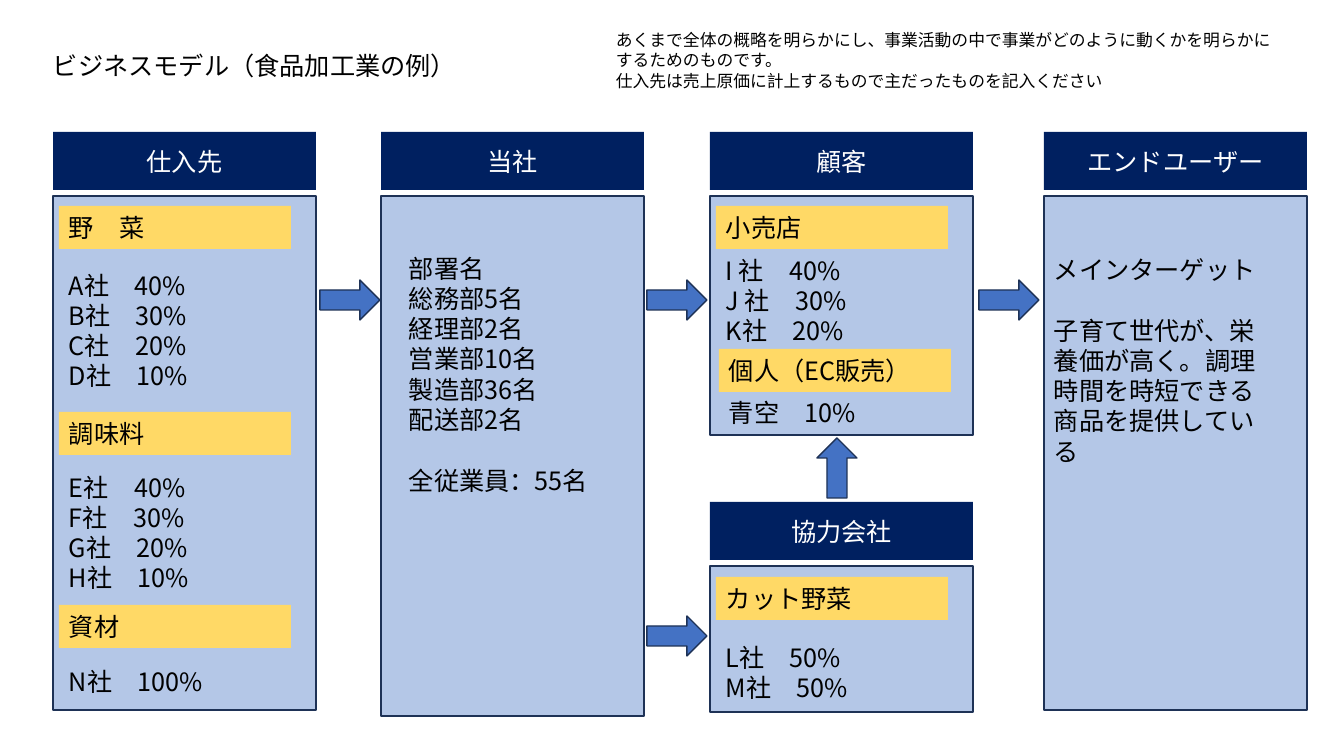
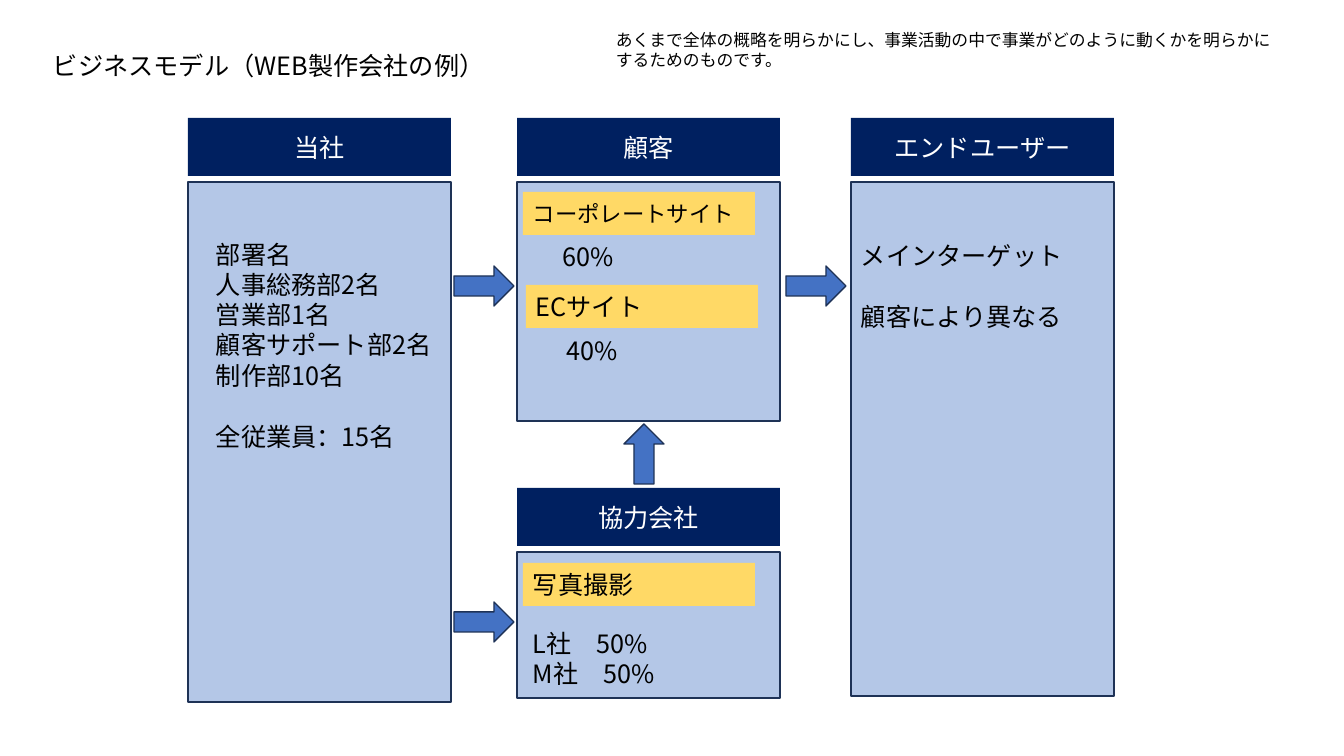
"""Build two business model diagrams: a food processor and a web studio."""
from lxml import etree
from pptx import Presentation
from pptx.dml.color import RGBColor
from pptx.enum.shapes import MSO_SHAPE
from pptx.enum.text import MSO_ANCHOR, PP_ALIGN
from pptx.oxml.ns import qn
from pptx.util import Pt

RECTANGLE, RIGHT, UP = MSO_SHAPE.RECTANGLE, MSO_SHAPE.RIGHT_ARROW, MSO_SHAPE.UP_ARROW
TOP, MIDDLE = MSO_ANCHOR.TOP, MSO_ANCHOR.MIDDLE
LEFT, CENTER = PP_ALIGN.LEFT, PP_ALIGN.CENTER

BLACK = RGBColor(0x00, 0x00, 0x00)
WHITE = RGBColor(0xFF, 0xFF, 0xFF)
NAVY = RGBColor(0x00, 0x20, 0x60)
PALE = RGBColor(0xB4, 0xC7, 0xE7)
GOLD = RGBColor(0xFF, 0xD9, 0x66)
BLUE = RGBColor(0x44, 0x72, 0xC4)
EDGE = RGBColor(0x1E, 0x32, 0x56)

FONT = "Noto Sans CJK JP"
EMU_PER_PX = 914400 / 100.8
PANEL_WIDTH, HEADER_HEIGHT, BODY_OFFSET = 263, 58, 64
TAG_WIDTH, TAG_HEIGHT = 232, 43
LINE_HEIGHT, TEXT_MARGIN = 30, 10
ARROW_LENGTH, ARROW_BREADTH = 60, 40
BLANK_LINE = 22

SUPPLIER, COMPANY, CUSTOMER, END_USER = 53, 381, 710, 1044
UPPER, LOWER = 132, 502
ARROWS = [
    (SUPPLIER, RIGHT, 320, 280),
    (COMPANY, RIGHT, 647, 280),
    (CUSTOMER, RIGHT, 979, 280),
    (COMPANY, RIGHT, 647, 616),
    (CUSTOMER, UP, 817, 438),
]
PURPOSE = "あくまで全体の概略を明らかにし、事業活動の中で事業がどのように動くかを明らかにするためのものです。"

PAGES = [
    {
        "title": "ビジネスモデル（食品加工業の例）",
        "notes": [PURPOSE, "仕入先は売上原価に計上するもので主だったものを記入ください"],
        "shift": (0, 0),
        "first": SUPPLIER,
        "panels": [
            ("仕入先", SUPPLIER, UPPER, 514,
             [(6, 74, "野　菜", 18), (6, 280, "調味料", 18), (6, 473, "資材", 18)],
             [(6, 133, 219, 4, ["A社　40%", "B社　30%", "C社　20%", "D社　10%"]),
              (6, 335, 219, 4, ["E社　40%", "F社　30%", "G社　20%", "H社　10%"]),
              (6, 529, 219, 1, ["N社　100%"])]),
            ("当社", COMPANY, UPPER, 520, [],
             [(18, 116, 219, 8, ["部署名", "総務部5名", "経理部2名", "営業部10名",
                                 "製造部36名", "配送部2名", "全従業員：55名"])]),
            ("顧客", CUSTOMER, UPPER, 239,
             [(6, 74, "小売店", 18), (9, 217, "個人（EC販売）", 18)],
             [(6, 118, 219, 3, ["I 社　40%", "J 社　30%", "K社　20%"]),
              (9, 260, 219, 1, ["青空　10%"])]),
            ("エンドユーザー", END_USER, UPPER, 514, [],
             [(0, 117, 241, 7, ["メインターゲット",
                                "子育て世代が、栄養価が高く。調理時間を時短できる商品を提供している"])]),
            ("協力会社", CUSTOMER, LOWER, 146,
             [(6, 75, "カット野菜", 18)],
             [(6, 135, 257, 2, ["L社　50%", "M社　50%"])]),
        ],
    },
    {
        "title": "ビジネスモデル（WEB製作会社の例）",
        "notes": [PURPOSE],
        "shift": (-193, -14),
        "first": COMPANY,
        "panels": [
            ("当社", COMPANY, UPPER, 520, [],
             [(18, 116, 255, 7, ["部署名", "人事総務部2名", "営業部1名",
                                 "顧客サポート部2名", "制作部10名", "全従業員：15名"])]),
            ("顧客", CUSTOMER, UPPER, 239,
             [(6, 74, "コーポレートサイト", 16), (9, 167, "ECサイト", 18)],
             [(36, 118, 189, 1, ["60%"]), (40, 212, 189, 1, ["40%"])]),
            ("エンドユーザー", END_USER, UPPER, 514, [],
             [(0, 117, 241, 3, ["メインターゲット", "顧客により異なる"])]),
            ("協力会社", CUSTOMER, LOWER, 146,
             [(6, 75, "写真撮影", 18)],
             [(6, 135, 257, 2, ["L社　50%", "M社　50%"])]),
        ],
    },
]


def add_block(page, kind, bounds, fill, edge=None):
    """Add a filled preset shape, outlined only when an edge colour is given."""
    block = page.shapes.add_shape(kind, *[round(n * EMU_PER_PX) for n in bounds])
    block.shadow.inherit = False
    block.fill.solid()
    block.fill.fore_color.rgb = fill
    if edge is None:
        block.line.fill.background()
    else:
        block.line.color.rgb = edge
        block.line.width = Pt(1)
    return block


def write(page, lines, size=18, bounds=None, block=None, color=BLACK, align=LEFT):
    """Write paragraphs into a block, or into a new text box at the bounds."""
    box = block or page.shapes.add_textbox(*[round(n * EMU_PER_PX) for n in bounds])
    frame = box.text_frame
    frame.word_wrap = True
    frame.vertical_anchor = MIDDLE if block else TOP
    frame.text = "\n".join(lines)
    for para in frame.paragraphs:
        para.alignment = align
        for span in para.runs:
            span.font.size = Pt(size)
            span.font.name = FONT
            span.font.color.rgb = color
            east_asian = etree.SubElement(span.font._element, qn("a:ea"))
            east_asian.set("typeface", FONT)
    return frame


deck = Presentation()
deck.slide_width = round(1344 * EMU_PER_PX)
deck.slide_height = round(756 * EMU_PER_PX)

for content in PAGES:
    page = deck.slides.add_slide(deck.slide_layouts[6])
    shift_x, shift_y = content["shift"]
    write(page, [content["title"]], bounds=(43, 45, 470, 40))
    write(page, content["notes"], size=12, bounds=(606, 25, 689, 72))

    for heading, column, row, body_height, tags, texts in content["panels"]:
        left, top = column + shift_x, row + shift_y
        add_block(page, RECTANGLE, (left, top + BODY_OFFSET, PANEL_WIDTH, body_height), PALE, EDGE)
        header = add_block(page, RECTANGLE, (left, top, PANEL_WIDTH, HEADER_HEIGHT), NAVY)
        write(page, [heading], block=header, color=WHITE, align=CENTER)
        for x, y, label, size in tags:
            tag = add_block(page, RECTANGLE, (left + x, top + y, TAG_WIDTH, TAG_HEIGHT), GOLD)
            write(page, [label], size=size, block=tag)
        for x, y, width, rows, lines in texts:
            height = rows * LINE_HEIGHT + TEXT_MARGIN
            frame = write(page, lines, bounds=(left + x, top + y, width, height))
            if not tags:
                frame.paragraphs[-1].space_before = Pt(BLANK_LINE)

    for column, kind, x, y in ARROWS:
        if column >= content["first"]:
            size = (ARROW_LENGTH, ARROW_BREADTH) if kind == RIGHT else (ARROW_BREADTH, ARROW_LENGTH)
            add_block(page, kind, (x + shift_x, y + shift_y, *size), BLUE, EDGE)

deck.save("out.pptx")
